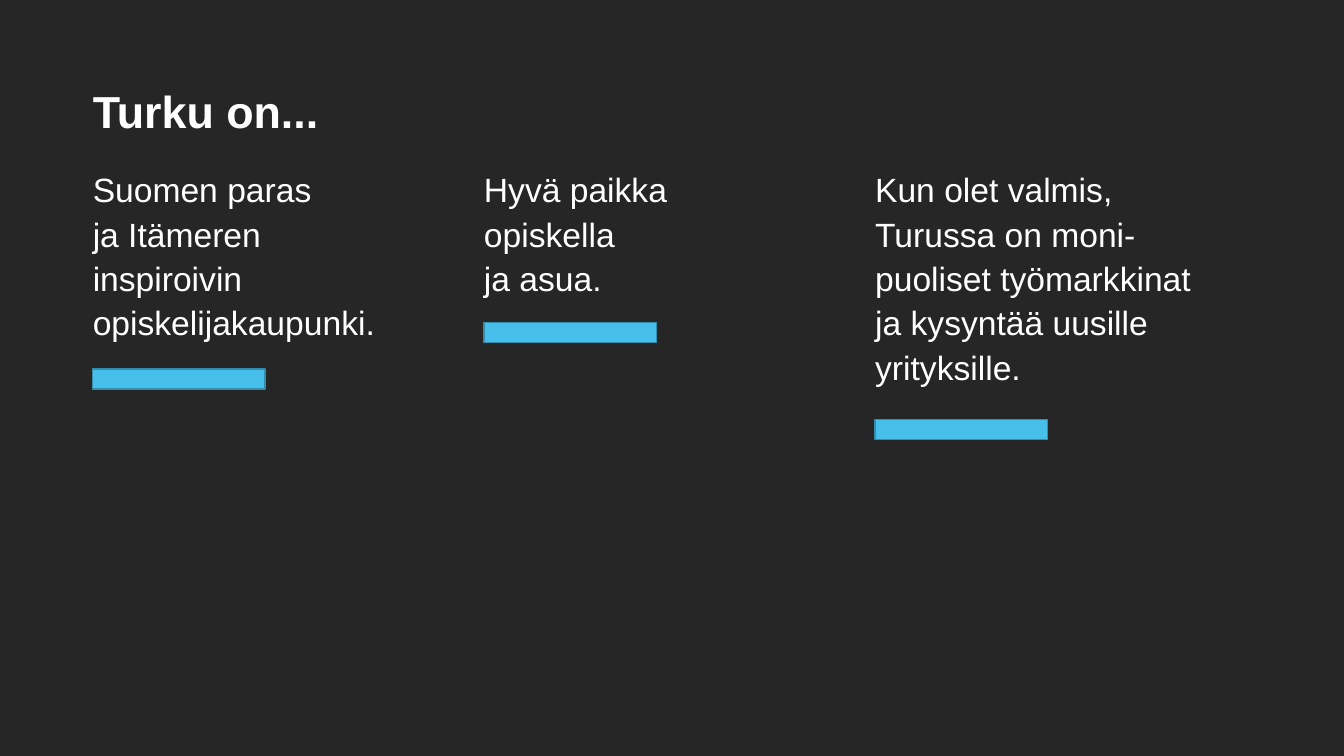
"""Build the Turku slide: a heading and three columns underlined by blue bars."""
from dataclasses import dataclass

from lxml.etree import SubElement
from pptx import Presentation
from pptx.dml.color import RGBColor
from pptx.enum.shapes import MSO_SHAPE
from pptx.enum.text import MSO_ANCHOR, MSO_AUTO_SIZE, PP_ALIGN
from pptx.oxml.ns import qn
from pptx.util import Inches, Pt


@dataclass(frozen=True)
class Theme:
    font: str = "Arial"
    background: RGBColor = RGBColor(0x26, 0x26, 0x26)
    text: RGBColor = RGBColor(0xFF, 0xFF, 0xFF)
    bar: RGBColor = RGBColor(0x46, 0xBF, 0xEA)
    bar_edge: RGBColor = RGBColor(0x34, 0x8D, 0xAD)
    heading_size: Pt = Pt(32)
    column_size: Pt = Pt(24)


THEME = Theme()
LEFT, COLUMN_STEP = 0.92, 3.88


def place(holder, left, top, width, height):
    holder.left, holder.top = Inches(left), Inches(top)
    holder.width, holder.height = Inches(width), Inches(height)
    frame = holder.text_frame
    frame.word_wrap = True
    frame.auto_size = MSO_AUTO_SIZE.NONE
    frame.margin_left = frame.margin_right = 0
    frame.margin_top = frame.margin_bottom = 0


def write(frame, lines, size, bold, spacing):
    paragraph = frame.paragraphs[0]
    properties = paragraph._p.get_or_add_pPr()
    properties.set("marL", "0")
    properties.set("indent", "0")
    SubElement(properties, qn("a:buNone"))
    paragraph.alignment = PP_ALIGN.LEFT
    paragraph.line_spacing = spacing
    paragraph.space_before = Pt(0)
    for number, line in enumerate(lines):
        if number:
            paragraph.add_line_break()
        run = paragraph.add_run()
        run.text = line
        run.font.name = THEME.font
        run.font.size = size
        run.font.bold = bold
        run.font.color.rgb = THEME.text


presentation = Presentation()
presentation.slide_width, presentation.slide_height = Inches(13.33), Inches(7.5)
slide = presentation.slides.add_slide(presentation.slide_layouts.get_by_name("Comparison"))
slide.background.fill.solid()
slide.background.fill.fore_color.rgb = THEME.background

heading = slide.shapes.title
place(heading, LEFT, 0.4, 11.5, 0.97)
heading.text_frame.vertical_anchor = MSO_ANCHOR.BOTTOM
write(heading.text_frame, ["Turku on..."], THEME.heading_size, True, 0.9)

reasons = [
    (["Suomen paras", "ja Itämeren", "inspiroivin", "opiskelijakaupunki."], 3.66),
    (["Hyvä paikka", "opiskella", "ja asua."], 3.2),
    (["Kun olet valmis,", "Turussa on moni-", "puoliset työmarkkinat",
      "ja kysyntää uusille yrityksille."], 4.16),
]
_, *columns, spare = slide.placeholders
spare.element.getparent().remove(spare.element)

for index, (column, (lines, bar_top)) in enumerate(zip(columns, reasons)):
    left = LEFT + index * COLUMN_STEP
    place(column, left, 1.64, 3.73, 4.41)
    column.text_frame.vertical_anchor = MSO_ANCHOR.TOP
    write(column.text_frame, lines, THEME.column_size, False, 1.1)

    bar = slide.shapes.add_shape(
        MSO_SHAPE.RECTANGLE, Inches(left), Inches(bar_top), Inches(1.71), Inches(0.2))
    bar.shadow.inherit = False
    bar.fill.solid()
    bar.fill.fore_color.rgb = THEME.bar
    bar.line.color.rgb = THEME.bar_edge
    bar.line.width = Pt(1)

presentation.save("out.pptx")
